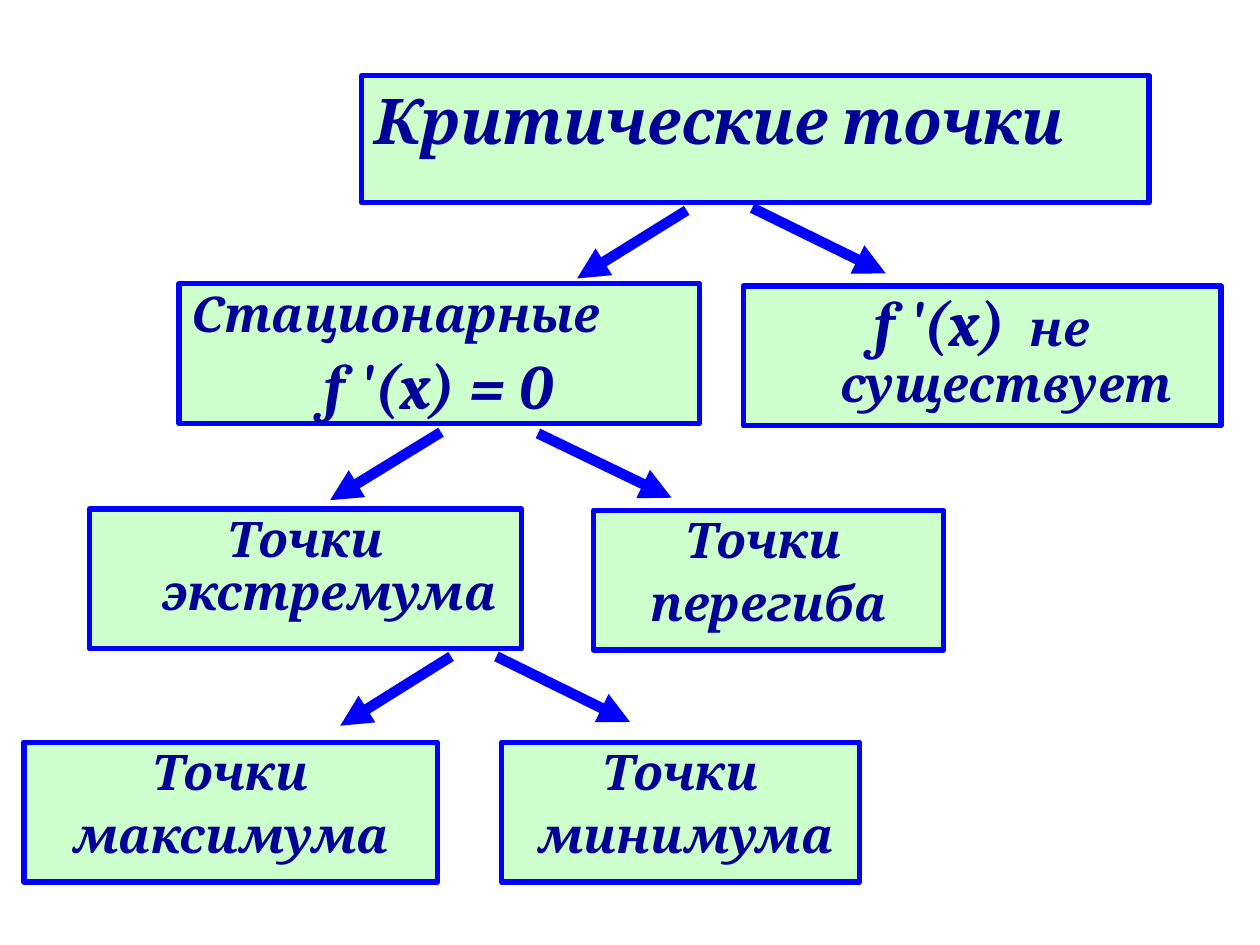
from dataclasses import dataclass

import pptx
import pptx.dml.color
import pptx.enum.shapes
import pptx.enum.text
import pptx.oxml
import pptx.oxml.ns
import pptx.util
from pptx.util import Inches

GREEN = pptx.dml.color.RGBColor(0xCC, 0xFF, 0xCC)
BLUE = pptx.dml.color.RGBColor(0x00, 0x00, 0xFF)
NAVY = pptx.dml.color.RGBColor(0x00, 0x00, 0x99)
FONT = "Cambria"
TITLE_SIZE = FORMULA_SIZE = 36
LABEL_SIZE = 28
HANGING = 0.38
NODE_HEIGHT = 1.11
LEFT = pptx.enum.text.PP_ALIGN.LEFT
CENTER = pptx.enum.text.PP_ALIGN.CENTER


@dataclass(frozen=True)
class Span:
    text: str
    size: int = LABEL_SIZE


@dataclass(frozen=True)
class Line:
    spans: tuple[Span, ...]
    align: int = CENTER


@dataclass(frozen=True)
class Node:
    left: float
    top: float
    width: float
    lines: tuple[Line, ...]


@dataclass(frozen=True)
class Arrow:
    start: tuple[float, float]
    end: tuple[float, float]


def label(text: str, align: int = CENTER) -> Line:
    return Line((Span(text),), align)


NODES = (
    Node(1.42, 2.25, 4.13, (label("Стационарные", LEFT),
                            Line((Span("f '(x) = 0", FORMULA_SIZE),)))),
    Node(5.9, 2.27, 3.79, (Line((Span("f '(x) ", FORMULA_SIZE),
                                 Span(" не существует"))),)),
    Node(0.71, 4.04, 3.43, (label("Точки экстремума"),)),
    Node(4.71, 4.05, 2.78, (label("Точки "), label("перегиба"))),
    Node(0.19, 5.89, 3.28, (label("Точки"), label("максимума"))),
    Node(3.98, 5.89, 2.84, (label("Точки"), label(" минимума"))),
)

ARROWS = (
    Arrow((5.97, 1.65), (7.03, 2.17)),
    Arrow((5.45, 1.67), (4.58, 2.21)),
    Arrow((3.5, 3.43), (2.62, 3.97)),
    Arrow((4.27, 3.44), (5.33, 3.95)),
    Arrow((3.58, 5.21), (2.7, 5.76)),
    Arrow((3.94, 5.21), (5, 5.73)),
)


def style_box(box) -> None:
    box.fill.solid()
    box.fill.fore_color.rgb = GREEN
    box.line.color.rgb = BLUE
    box.line.width = pptx.util.Pt(3)
    frame = box.text_frame
    frame.word_wrap = True
    frame.auto_size = pptx.enum.text.MSO_AUTO_SIZE.NONE
    frame.vertical_anchor = pptx.enum.text.MSO_ANCHOR.TOP


def write_line(paragraph, line: Line) -> None:
    paragraph.alignment = line.align
    properties = paragraph._p.get_or_add_pPr()
    properties.set("marL", str(Inches(HANGING)))
    properties.set("indent", str(-Inches(HANGING)))
    for span in line.spans:
        run = paragraph.add_run()
        run.text = span.text
        run.font.name = FONT
        run.font.size = pptx.util.Pt(span.size)
        run.font.bold = run.font.italic = True
        run.font.color.rgb = NAVY


def place_title(page, text: str) -> None:
    title = page.shapes.title
    title.left, title.top = Inches(2.87), Inches(0.6)
    title.width, title.height = Inches(6.25), Inches(1.01)
    style_box(title)
    write_line(title.text_frame.paragraphs[0],
               Line((Span(text, TITLE_SIZE),), LEFT))


def draw_node(page, node: Node) -> None:
    box = page.shapes.add_shape(
        pptx.enum.shapes.MSO_SHAPE.RECTANGLE, Inches(node.left),
        Inches(node.top), Inches(node.width), Inches(NODE_HEIGHT))
    box.shadow.inherit = False
    style_box(box)
    frame = box.text_frame
    for index, line in enumerate(node.lines):
        paragraph = frame.add_paragraph() if index else frame.paragraphs[0]
        write_line(paragraph, line)
        paragraph.line_spacing = 0.9
        if index:
            paragraph.space_before = pptx.util.Pt(0.2 * line.spans[0].size)


def draw_arrow(page, arrow: Arrow) -> None:
    connector = page.shapes.add_connector(
        pptx.enum.shapes.MSO_CONNECTOR.STRAIGHT,
        *map(Inches, arrow.start + arrow.end))
    connector.line.color.rgb = BLUE
    connector.line.width = pptx.util.Pt(6)
    head = pptx.oxml.parse_xml(
        f'<a:tailEnd {pptx.oxml.ns.nsdecls("a")} type="triangle"/>')
    connector.line._get_or_add_ln().append(head)
    connector._element.spPr.append(pptx.oxml.parse_xml(
        f'<a:effectLst {pptx.oxml.ns.nsdecls("a")}/>'))


def main() -> None:
    deck = pptx.Presentation()
    deck.slide_width, deck.slide_height = Inches(10), Inches(7.5)
    page = deck.slides.add_slide(deck.slide_layouts.get_by_name("Title Only"))
    place_title(page, "Критические точки")
    for arrow in ARROWS:
        draw_arrow(page, arrow)
    for node in NODES:
        draw_node(page, node)
    deck.save("out.pptx")


if __name__ == "__main__":
    main()
